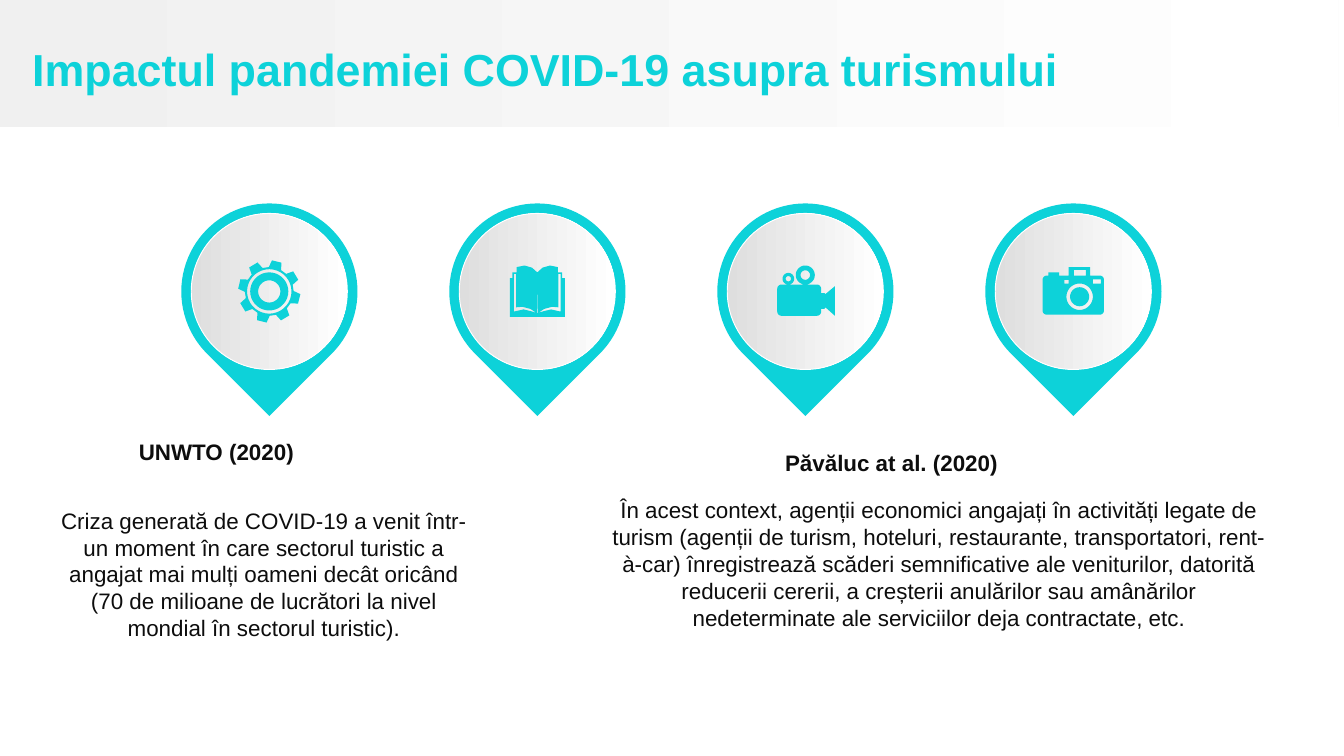
import math

import pptx
import pptx.dml.color
import pptx.enum.shapes
import pptx.enum.text
import pptx.util

Cm = pptx.util.Cm
RGBColor = pptx.dml.color.RGBColor
Shape = pptx.enum.shapes.MSO_SHAPE
Align = pptx.enum.text.PP_ALIGN
Anchor = pptx.enum.text.MSO_ANCHOR

TURQUOISE = RGBColor(0x0D, 0xD2, 0xD9)
INK = RGBColor(0x0D, 0x0D, 0x0D)
WHITE = RGBColor(0xFF, 0xFF, 0xFF)
PALE = RGBColor(0xF0, 0xF0, 0xF0)
SILVER = RGBColor(0xDE, 0xDE, 0xDE)

PIN_X, PIN_STEP, PIN_Y = 5.09, 5.065, 5.51
DROP_SIZE, DISC_SIZE = 3.33, 2.95

TITLE = "Impactul pandemiei COVID-19 asupra turismului"
CRISIS = (
    "Criza generată de COVID-19 a venit într-un moment în care sectorul turistic "
    "a angajat mai mulți oameni decât oricând (70 de milioane de lucrători la "
    "nivel mondial în sectorul turistic)."
)
CONTEXT = (
    "În acest context, agenții economici angajați în activități legate de turism "
    "(agenții de turism, hoteluri, restaurante, transportatori, rent-à-car) "
    "înregistrează scăderi semnificative ale veniturilor, datorită reducerii "
    "cererii, a creșterii anulărilor sau amânărilor nedeterminate ale serviciilor "
    "deja contractate, etc."
)


def polar(x, y, radius, degrees):
    angle = math.radians(degrees)
    return x + radius * math.cos(angle), y + radius * math.sin(angle)


def circle(x, y, radius):
    return [polar(x, y, radius, degrees) for degrees in range(0, 360, 10)]


def rectangle(left, top, right, bottom):
    return [(left, top), (right, top), (right, bottom), (left, bottom)]


def rounded(left, top, right, bottom, radius):
    corners = rectangle(left + radius, top + radius, right - radius, bottom - radius)
    return [
        polar(x, y, radius, 180 + 90 * index + degrees)
        for index, (x, y) in enumerate(corners)
        for degrees in range(0, 91, 15)
    ]


def mirrored(points):
    return [(-x, y) for x, y in points]


def gear():
    tooth = [(-15, 0.46), (-9, 0.59), (9, 0.59), (15, 0.46)]
    wheel = [
        polar(0, 0, radius, 45 * index - 31 + turn)
        for index in range(8)
        for turn, radius in tooth
    ]
    return [wheel] + [circle(0, 0, radius) for radius in (0.42, 0.36, 0.21)]


def book():
    cover = [
        (0, -0.36), (0.1, -0.45), (0.24, -0.49), (0.39, -0.46), (0.39, -0.36),
        (0.47, -0.36), (0.47, -0.25), (0.52, -0.25), (0.52, 0.48),
    ]
    gap = [
        (0, -0.34), (0.01, 0.41), (0.13, 0.33), (0.28, 0.29), (0.4, 0.3),
        (0.4, -0.33), (0.44, -0.33), (0.44, 0.38), (0.26, 0.34), (0.13, 0.37),
        (0, 0.41),
    ]
    return [cover + mirrored(cover)[::-1], gap, mirrored(gap)]


def film_camera():
    lens = [
        (0.3, 0.03), (0.36, 0.03), (0.38, 0.05), (0.56, -0.1),
        (0.56, 0.46), (0.38, 0.3), (0.36, 0.33), (0.3, 0.33),
    ]
    reels = [(0, -0.31, 0.18), (0, -0.31, 0.09), (-0.32, -0.24, 0.11), (-0.32, -0.24, 0.05)]
    return [rounded(-0.53, -0.13, 0.3, 0.46, 0.08), lens] + [circle(*reel) for reel in reels]


def photo_camera():
    details = [
        (0.01, -0.41, 0.24, -0.3), (-0.47, -0.36, -0.27, -0.3),
        (-0.17, -0.22, -0.09, -0.15), (0.37, -0.23, 0.52, -0.15),
    ]
    return [
        rounded(-0.58, -0.3, 0.58, 0.44, 0.08),
        rectangle(-0.09, -0.46, 0.32, -0.3),
        circle(0.12, 0.1, 0.25),
        circle(0.12, 0.1, 0.18),
    ] + [rectangle(*detail) for detail in details]


class Painter:
    """Draws styled elements on the current page."""

    def __init__(self, page):
        self.page = page
        self.font = {"name": "Arial", "size": pptx.util.Pt(12), "bold": False}
        self.frame = {
            "word_wrap": True,
            "margin_left": Cm(0.25),
            "margin_right": Cm(0.25),
            "margin_top": Cm(0.13),
            "margin_bottom": Cm(0.13),
        }

    def text(self, place, words, color=INK, align=Align.CENTER, anchor=Anchor.TOP, **style):
        box = self.page.shapes.add_textbox(*map(Cm, place))
        for name, value in {**self.frame, "vertical_anchor": anchor}.items():
            setattr(box.text_frame, name, value)
        para = box.text_frame.paragraphs[0]
        para.alignment = align
        span = para.add_run()
        span.text = words
        for name, value in {**self.font, **style}.items():
            setattr(span.font, name, value)
        span.font.color.rgb = color

    def shape(self, kind, place, rotation=0):
        shape = self.page.shapes.add_shape(kind, *map(Cm, place))
        shape.rotation = rotation
        return self.solid(shape)

    def solid(self, shape):
        shape.shadow.inherit = False
        shape.fill.solid()
        shape.fill.fore_color.rgb = TURQUOISE
        shape.line.fill.background()
        return shape

    def gradient(self, kind, place, start):
        shape = self.shape(kind, place)
        shape.fill.gradient()
        shape.fill.gradient_angle = 0
        for stop, color, position in zip(shape.fill.gradient_stops, (start, WHITE), (0, 1)):
            stop.color.rgb = color
            stop.position = position
        return shape

    def icon(self, x, y, contours):
        outlines = [[(Cm(across), Cm(down)) for across, down in points] for points in contours]
        builder = self.page.shapes.build_freeform(*outlines[0][0])
        for points in outlines:
            builder.move_to(*points[0])
            builder.add_line_segments(points[1:], close=True)
        self.solid(builder.convert_to_shape(Cm(x), Cm(y)))

    def pin(self, x, y, contours):
        drop, disc = (
            (x - size / 2, y - size / 2, size, size) for size in (DROP_SIZE, DISC_SIZE)
        )
        self.shape(Shape.TEAR, drop, 135)
        face = self.gradient(Shape.OVAL, disc, SILVER)
        face.line.color.rgb = WHITE
        face.line.width = pptx.util.Pt(0.5)
        self.icon(x, y, contours)


def main():
    deck = pptx.Presentation()
    deck.slide_width, deck.slide_height = Cm(25.4), Cm(14.29)
    painter = Painter(deck.slides.add_slide(deck.slide_layouts[6]))

    painter.gradient(Shape.RECTANGLE, (0, 0, 25.3, 2.4), PALE)
    painter.text(
        (0.36, 0.22, 25, 2.16), TITLE, TURQUOISE, Align.LEFT, Anchor.MIDDLE,
        size=pptx.util.Pt(24), bold=True,
    )
    for index, draw in enumerate((gear, book, film_camera, photo_camera)):
        painter.pin(PIN_X + index * PIN_STEP, PIN_Y, draw())

    painter.text((1.93, 8.15, 4.32, 0.76), "UNWTO (2020)", bold=True)
    painter.text((0.89, 9.45, 8.2, 2.82), CRISIS)
    painter.text((13.74, 8.36, 6.22, 0.76), "Păvăluc at al. (2020)", bold=True)
    painter.text((11.3, 9.25, 12.9, 2.82), CONTEXT)
    deck.save("out.pptx")


if __name__ == "__main__":
    main()
